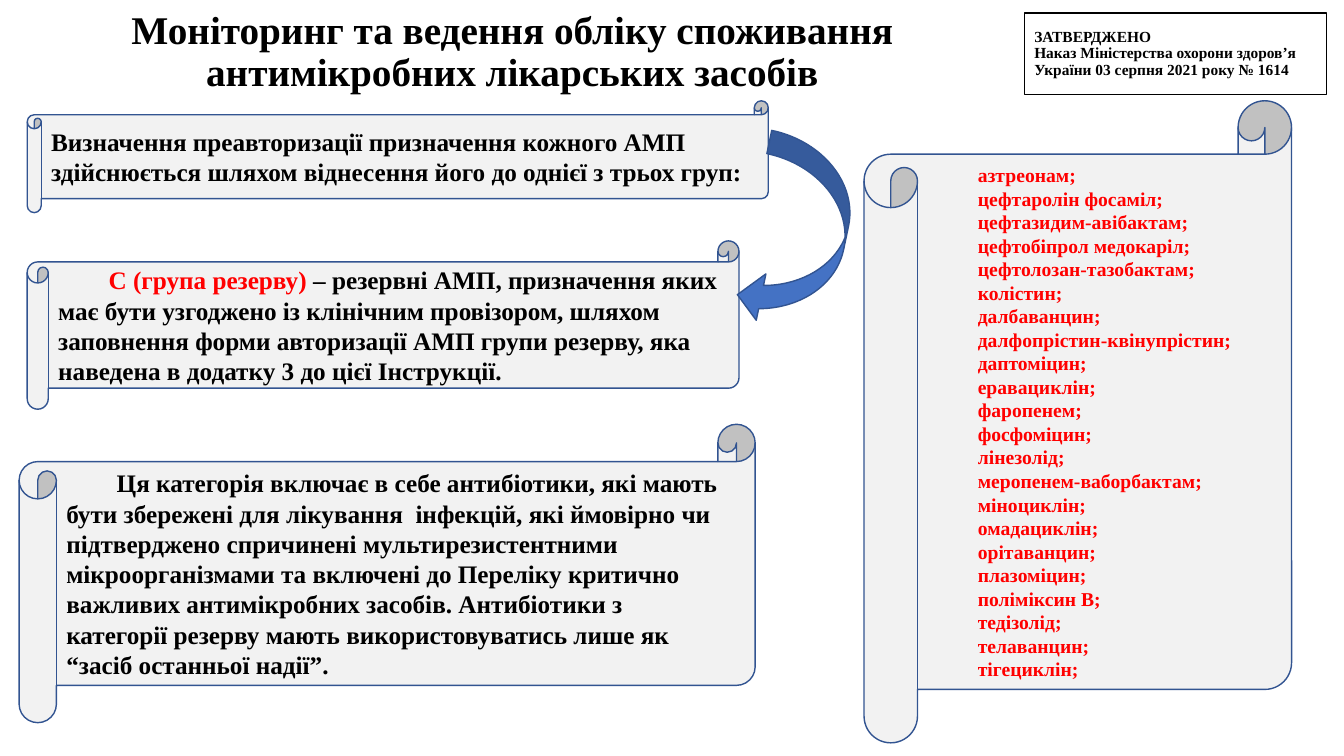
"""Builds a slide on monitoring antimicrobial use: the reserve group and its medicines."""
from dataclasses import dataclass

from pptx import Presentation
from pptx.dml.color import RGBColor
from pptx.enum.shapes import MSO_SHAPE
from pptx.enum.text import MSO_ANCHOR, MSO_AUTO_SIZE, PP_ALIGN
from pptx.oxml.ns import qn
from pptx.util import Inches, Pt

SCROLL = MSO_SHAPE.HORIZONTAL_SCROLL
CURVED_ARROW = MSO_SHAPE.CURVED_UP_ARROW
RECTANGLE = MSO_SHAPE.RECTANGLE
MIDDLE = MSO_ANCHOR.MIDDLE
NO_AUTOFIT = MSO_AUTO_SIZE.NONE
LEFT, CENTER = PP_ALIGN.LEFT, PP_ALIGN.CENTER
TITLE_ONLY = 5


@dataclass(frozen=True)
class Theme:
    font: str = "Times New Roman"
    black: RGBColor = RGBColor(0x00, 0x00, 0x00)
    red: RGBColor = RGBColor(0xFF, 0x00, 0x00)
    paper: RGBColor = RGBColor(0xF2, 0xF2, 0xF2)
    blue: RGBColor = RGBColor(0x44, 0x72, 0xC4)
    outline: RGBColor = RGBColor(0x32, 0x54, 0x91)
    title: Pt = Pt(28)
    body: Pt = Pt(18)
    list: Pt = Pt(14)
    approval: Pt = Pt(11)


theme = Theme()
presentation = Presentation()
presentation.slide_width = Inches(13.33)
presentation.slide_height = Inches(7.5)
slide = presentation.slides.add_slide(presentation.slide_layouts[TITLE_ONLY])


def add_box(kind, box, fill, line):
    """Adds an outlined preset shape; no fill colour leaves it clear."""
    shape = slide.shapes.add_shape(kind, *map(Inches, box))
    shape.shadow.inherit = False
    if fill is None:
        shape.fill.background()
    else:
        shape.fill.solid()
        shape.fill.fore_color.rgb = fill
    shape.line.color.rgb = line
    shape.line.width = Pt(1)
    return shape


def write(shape, paragraphs, size, indent=0, align=LEFT, spacing=1.0):
    """Fills a shape with paragraphs, each a list of (text, colour) runs."""
    frame = shape.text_frame
    frame.word_wrap = True
    frame.auto_size = NO_AUTOFIT
    frame.vertical_anchor = MIDDLE
    for number, runs in enumerate(paragraphs):
        paragraph = frame.add_paragraph() if number else frame.paragraphs[0]
        paragraph.alignment = align
        paragraph.line_spacing = spacing
        if indent:
            properties = paragraph._p.get_or_add_pPr()
            properties.set("marL", "0")
            properties.set("indent", str(Inches(indent)))
        for position, (text, color) in enumerate(runs):
            if text == "\n":
                paragraph.add_line_break()
                continue
            run = paragraph.add_run()
            run.text = text
            run.font.name = theme.font
            run.font.size = size
            run.font.bold = True
            run.font.color.rgb = color


title = slide.shapes.title
title.left, title.top, title.width, title.height = map(Inches, (0.27, 0.25, 9.62, 0.55))
write(title, [[("Моніторинг та ведення обліку споживання антимікробних лікарських засобів",
                theme.black)]], theme.title, align=CENTER, spacing=0.9)

approval = add_box(RECTANGLE, (10.16, 0.13, 3, 0.81), None, theme.black)
write(approval, [[
    ("ЗАТВЕРДЖЕНО", theme.black),
    ("\n", theme.black),
    ("Наказ Міністерства охорони здоров’я України 03 серпня 2021 року № 1614", theme.black),
]], theme.approval, spacing=0.9)

medicines = (
    "азтреонам", "цефтаролін фосаміл", "цефтазидим-авібактам", "цефтобіпрол медокаріл",
    "цефтолозан-тазобактам", "колістин", "далбаванцин", "далфопрістин-квінупрістин",
    "даптоміцин", "еравациклін", "фаропенем", "фосфоміцин", "лінезолід",
    "меропенем-ваборбактам", "міноциклін", "омадациклін", "орітаванцин", "плазоміцин",
    "поліміксин В", "тедізолід", "телаванцин", "тігециклін",
)
groups_text = [[
    ("Визначення преавторизації призначення кожного АМП здійснюється шляхом "
     "віднесення його до однієї з трьох груп:", theme.black),
]]
reserve_text = [[
    ("С (група резерву) ", theme.red),
    ("– резервні АМП, призначення яких має бути узгоджено із клінічним провізором, "
     "шляхом заповнення форми авторизації АМП групи резерву, яка наведена "
     "в додатку 3 до цієї Інструкції.", theme.black),
]]
category_text = [[
    ("Ця категорія включає в себе антибіотики, які мають бути збережені для "
     "лікування  інфекцій, які ймовірно чи підтверджено спричинені "
     "мультирезистентними мікроорганізмами та включені до Переліку критично "
     "важливих антимікробних засобів. Антибіотики з категорії резерву мають "
     "використовуватись лише як “засіб останньої надії”.", theme.black),
]]
medicines_text = [[(f"{medicine};", theme.red)] for medicine in medicines]

scrolls = (
    ((0.27, 1, 7.35, 1.11), groups_text, theme.body, 0),
    ((0.27, 2.39, 7.06, 1.67), reserve_text, theme.body, 0.5),
    ((0.19, 4.21, 7.3, 2.96), category_text, theme.body, 0.5),
    ((8.57, 1, 4.24, 6.37), medicines_text, theme.list, 0.5),
)
for box, paragraphs, size, indent in scrolls:
    scroll = add_box(SCROLL, box, theme.paper, theme.outline)
    write(scroll, paragraphs, size, indent)

arrow = add_box(CURVED_ARROW, (6.97, 1.85, 1.9, 0.94), theme.blue, theme.outline)
arrow.rotation = 101.8
arrow.element.spPr.find(qn("a:xfrm")).set("flipV", "1")

presentation.save("out.pptx")
